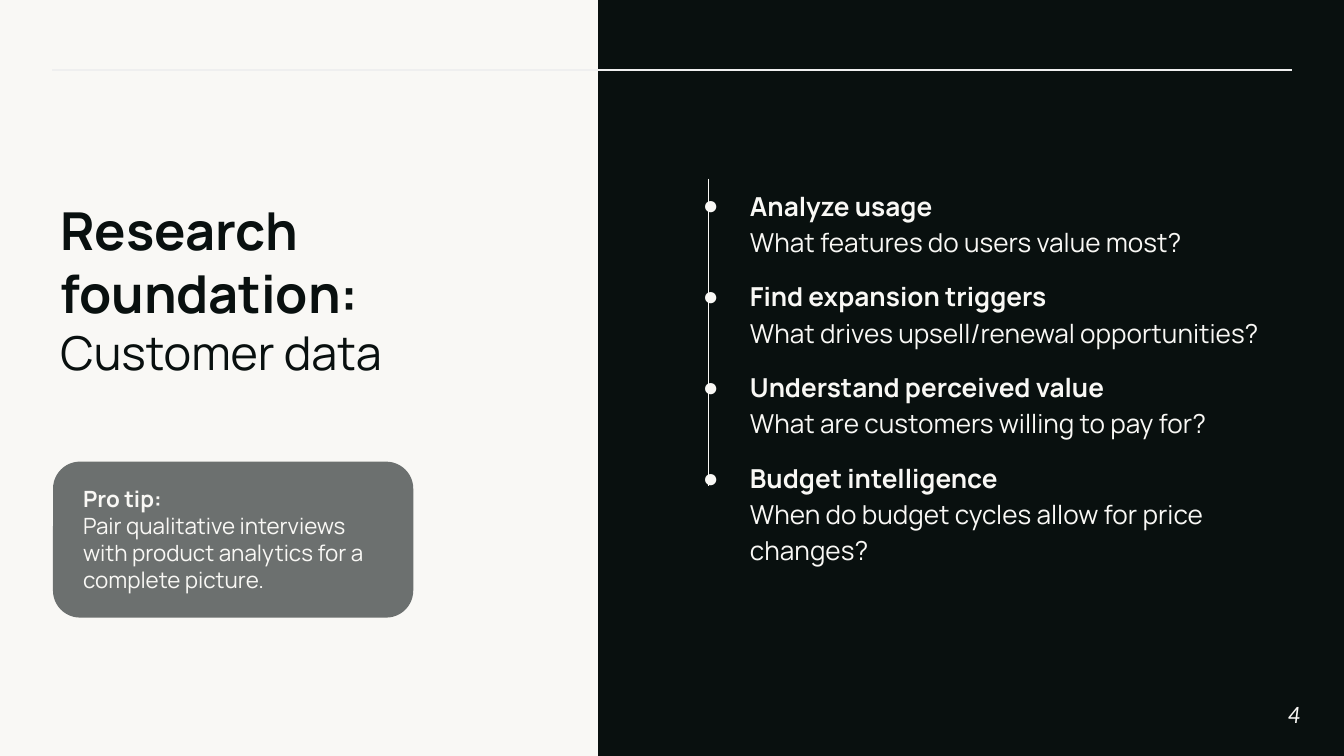
from lxml import etree
from pptx import Presentation
from pptx.dml.color import RGBColor
from pptx.enum.shapes import MSO_CONNECTOR as Connector, MSO_SHAPE as Shape
from pptx.enum.text import MSO_ANCHOR as Anchor, MSO_AUTO_SIZE as AutoSize, PP_ALIGN as Align
from pptx.oxml.ns import qn
from pptx.util import Inches, Pt

INK = RGBColor(0x09, 0x10, 0x0F)
PAPER = RGBColor(0xF9, 0xF8, 0xF5)
RULE = RGBColor(0xEF, 0xEF, 0xEF)
GRAY = RGBColor(0x6C, 0x70, 0x6F)

QUESTIONS = [
    ("Analyze usage", "What features do users value most?"),
    ("Find expansion triggers", "What drives upsell/renewal opportunities?"),
    ("Understand perceived value", "What are customers willing to pay for?"),
    ("Budget intelligence", "When do budget cycles allow for price changes?"),
]


def add_text(para, text, size=14, font="Manrope", color=PAPER, bold=False, italic=False):
    """Append one formatted run to a paragraph."""
    span = para.add_run()
    span.text = text
    span.font.size = Pt(size)
    span.font.name = font
    span.font.color.rgb = color
    span.font.bold = bold
    span.font.italic = italic


def place(shape, left, top, width, height):
    """Set the position and size of a shape in inches."""
    shape.left, shape.top = Inches(left), Inches(top)
    shape.width, shape.height = Inches(width), Inches(height)


def bring_to_front(shape):
    """Move a shape to the end of the drawing order."""
    shape.element.getparent().append(shape.element)


def prepare_frame(shape, anchor=Anchor.MIDDLE, inset=0.0):
    """Set wrapping, anchor and equal insets, and return the text frame."""
    frame = shape.text_frame
    frame.word_wrap = True
    frame.auto_size = AutoSize.NONE
    frame.vertical_anchor = anchor
    frame.margin_left = frame.margin_right = Inches(inset)
    frame.margin_top = frame.margin_bottom = Inches(inset)
    return frame


def add_panel(page, kind, left, top, width, height, color):
    """Add a flat filled shape."""
    panel = page.shapes.add_shape(
        kind, Inches(left), Inches(top), Inches(width), Inches(height))
    panel.shadow.inherit = False
    panel.fill.solid()
    panel.fill.fore_color.rgb = color
    panel.line.fill.background()
    return panel


def add_line(page, x1, y1, x2, y2, color):
    """Add a thin straight line without a shadow."""
    line = page.shapes.add_connector(
        Connector.STRAIGHT, Inches(x1), Inches(y1), Inches(x2), Inches(y2))
    line.line.color.rgb = color
    line.line.width = Pt(0.75)
    etree.SubElement(line.element.spPr, qn("a:effectLst"))


def add_bullet(para, color):
    """Give a paragraph a hanging round bullet."""
    props = para._p.get_or_add_pPr()
    props.set("marL", str(Inches(0.5)))
    props.set("indent", str(Inches(-0.35)))
    bullet_color = etree.SubElement(props, qn("a:buClr"))
    etree.SubElement(bullet_color, qn("a:srgbClr"), val=str(color))
    etree.SubElement(props, qn("a:buFont"), typeface="Arial")
    etree.SubElement(props, qn("a:buChar"), char="●")


def add_backdrop(page):
    """Paint the two-tone background and the header rule."""
    page.background.fill.solid()
    page.background.fill.fore_color.rgb = PAPER
    add_panel(page, Shape.RECTANGLE, 4.45, -0.02, 5.55, 5.67, INK)
    add_line(page, 9.61, 0.52, 0.39, 0.52, RULE)


def fill_title(page, left, top, width, height):
    """Fill the title placeholder with a bold and a light part."""
    title = page.shapes.title
    place(title, left, top, width, height)
    bring_to_front(title)
    para = prepare_frame(title).paragraphs[0]
    para.alignment = Align.LEFT
    para.space_after = Pt(10)
    add_text(para, "Research foundation: ", size=28, color=INK, bold=True)
    add_text(para, "Customer data", size=25, color=INK)


def fill_questions(page, left, top, width, height):
    """Fill the body placeholder with the questions along a timeline."""
    body = page.placeholders[1]
    place(body, left, top, width, height)
    bring_to_front(body)
    frame = prepare_frame(body)
    frame.margin_bottom = Inches(0.27)
    for index, (heading, question) in enumerate(QUESTIONS):
        para = frame.add_paragraph() if index else frame.paragraphs[0]
        para.line_spacing = 1.15
        para.space_before = Pt(10 if index else 0)
        add_bullet(para, PAPER)
        add_text(para, heading, bold=True)
        para.add_line_break()
        add_text(para, question)
    add_line(page, left + 0.19, top - 0.35, left + 0.19, top + 1.94, PAPER)


def add_tip(page, left, top, width, height):
    """Add the rounded tip card and its text."""
    card = add_panel(page, Shape.ROUNDED_RECTANGLE, left, top, width, height, GRAY)
    card.adjustments[0] = 0.17
    card.line.color.rgb = GRAY
    card.line.width = Pt(0.75)
    box = page.shapes.add_textbox(
        Inches(left + 0.12), Inches(top + 0.07), Inches(width - 0.33), Inches(height - 0.17))
    frame = prepare_frame(box, anchor=Anchor.TOP, inset=0.1)
    add_text(frame.paragraphs[0], "Pro tip:", size=12, bold=True)
    add_text(frame.add_paragraph(),
             "Pair qualitative interviews with product analytics for a complete picture.",
             size=12)


def add_page_number(page, left, top, width, height):
    """Add the page number at the right edge of its box."""
    box = page.shapes.add_textbox(Inches(left), Inches(top), Inches(width), Inches(height))
    para = prepare_frame(box).paragraphs[0]
    para.alignment = Align.RIGHT
    add_text(para, "4", size=12, font="Lato", italic=True)


def main():
    """Build the slide and save the deck."""
    deck = Presentation()
    deck.slide_width, deck.slide_height = Inches(10), Inches(10 * 9 / 16)
    page = deck.slides.add_slide(deck.slide_layouts[1])
    add_backdrop(page)
    fill_title(page, 0.45, 1.53, 2.97, 1.24)
    add_page_number(page, 9.08, 5.1, 0.6, 0.43)
    fill_questions(page, 5.08, 1.68, 4.32, 2.5)
    add_tip(page, 0.4, 3.44, 2.67, 1.15)
    deck.save("out.pptx")


if __name__ == "__main__":
    main()
